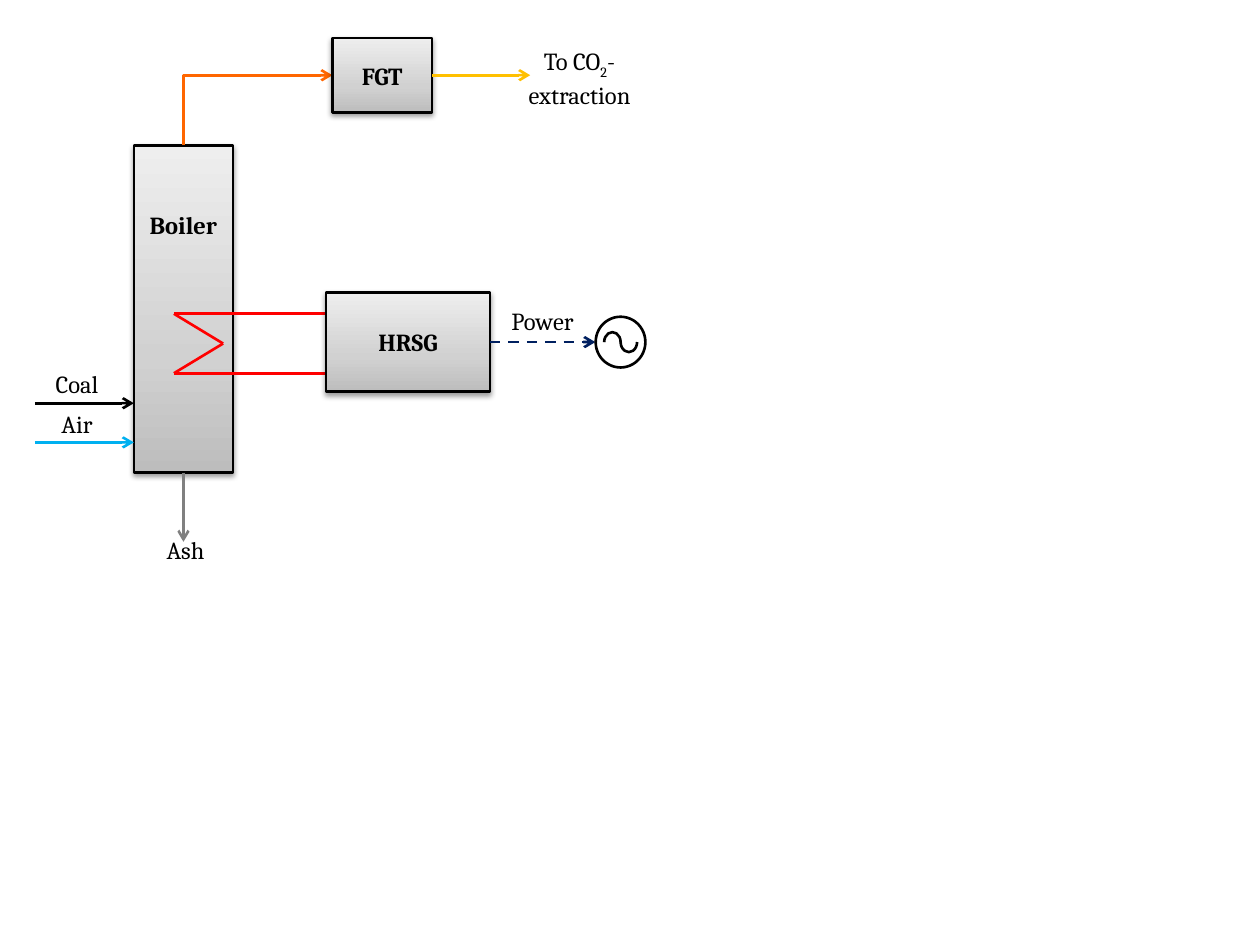
from copy import deepcopy
from dataclasses import dataclass

from pptx import Presentation
from pptx.dml.color import RGBColor
from pptx.enum.dml import MSO_LINE
from pptx.enum.shapes import MSO_CONNECTOR, MSO_SHAPE
from pptx.enum.text import MSO_ANCHOR, PP_ALIGN
from pptx.oxml import parse_xml
from pptx.oxml.ns import nsdecls, qn
from pptx.util import Pt


@dataclass(frozen=True)
class Theme:
    font: str = "Cambria"
    size: float = 14
    line: float = 1.5
    black: str = "000000"
    white: str = "FFFFFF"
    air: str = "00B0F0"
    ash: str = "808080"
    flue: str = "FF6600"
    clean: str = "FFC000"
    steam: str = "FF0000"
    power: str = "002060"
    metal: tuple = ((0, "BDBDBD"), (0.35, "D1D1D1"), (1, "EEEEEE"))


THEME = Theme()
SHADOW = (
    f'<a:effectLst {nsdecls("a")}>'
    '<a:outerShdw blurRad="39370" dist="20320" dir="5400000" rotWithShape="0">'
    '<a:srgbClr val="000000"><a:alpha val="38000"/></a:srgbClr>'
    "</a:outerShdw></a:effectLst>"
)


def rgb(code):
    return RGBColor.from_string(code)


def write(frame, text, bold=False, anchor=MSO_ANCHOR.TOP, top=3.6):
    """Write centred text; parts between tildes are subscripts."""
    frame.word_wrap = True
    frame.vertical_anchor = anchor
    frame.margin_top = Pt(top)
    para = frame.paragraphs[0]
    para.alignment = PP_ALIGN.CENTER
    for i, part in enumerate(text.split("~")):
        run = para.add_run()
        run.text = part
        font = run.font
        font.name, font.size, font.bold = THEME.font, Pt(THEME.size), bold
        font.color.rgb = rgb(THEME.black)
        if i % 2:
            font._element.set("baseline", "-25000")


def label(slide, text, x, y, w, h=24.5):
    box = slide.shapes.add_textbox(Pt(x), Pt(y), Pt(w), Pt(h))
    write(box.text_frame, text)


def stroke(line, color):
    line.color.rgb = rgb(color)
    line.width = Pt(THEME.line)


def outline(slide, kind, x, y, w, h):
    shape = slide.shapes.add_shape(kind, Pt(x), Pt(y), Pt(w), Pt(h))
    shape.shadow.inherit = False
    stroke(shape.line, THEME.black)
    return shape


def unit(slide, text, x, y, w, h, **form):
    """Process unit: metallic box with a soft shadow."""
    box = outline(slide, MSO_SHAPE.RECTANGLE, x, y, w, h)
    box.fill.gradient()
    box.fill.gradient_angle = 90
    props = box._element.spPr
    stops = props.find(qn("a:gradFill")).find(qn("a:gsLst"))
    stops.append(deepcopy(stops[-1]))
    for stop, (pos, color) in zip(box.fill.gradient_stops, THEME.metal):
        stop.position = pos
        stop.color.rgb = rgb(color)
    props.replace(props.find(qn("a:effectLst")), parse_xml(SHADOW))
    write(box.text_frame, text, bold=True, **form)
    return box


def link(slide, start, end, color, arrow=True, dash=False,
         kind=MSO_CONNECTOR.STRAIGHT):
    ends = [Pt(n) for n in (*start, *end)]
    line = slide.shapes.add_connector(kind, *ends)
    stroke(line.line, color)
    if dash:
        line.line.dash_style = MSO_LINE.DASH
    if arrow:
        head = parse_xml(f'<a:tailEnd {nsdecls("a")} type="arrow"/>')
        line.line._get_or_add_ln().append(head)
    line._element.spPr.append(parse_xml(f'<a:effectLst {nsdecls("a")}/>'))
    return line


def elbow(slide, start, end, color):
    """Arrow that rises from start, then turns right to end."""
    (x1, y1), (x2, y2) = start, end
    mid_x, mid_y = (x1 + x2) / 2, (y1 + y2) / 2
    half_w, half_h = (y1 - y2) / 2, (x2 - x1) / 2
    line = link(slide, (mid_x - half_w, mid_y - half_h),
                (mid_x + half_w, mid_y + half_h), color,
                kind=MSO_CONNECTOR.ELBOW)
    props = line._element.spPr
    props.find(qn("a:prstGeom")).set("prst", "bentConnector2")
    props.find(qn("a:xfrm")).set("rot", "16200000")


def coil(slide):
    left, right, tip = 99.4, 186.4, 127.5
    mid, half = 196.3, 17
    for y in (mid - half, mid + half):
        link(slide, (right, y), (left, y), THEME.steam, arrow=False)
        link(slide, (left, y), (tip, mid), THEME.steam, arrow=False)


def grid(slide):
    """Power grid symbol: a circle holding one sine wave."""
    disc = outline(slide, MSO_SHAPE.OVAL, 340.4, 181, 28.4, 29)
    disc.fill.solid()
    disc.fill.fore_color.rgb = rgb(THEME.white)
    for x, turn in ((344.2, 270), (353.6, 90)):
        arc = outline(slide, MSO_SHAPE.ARC, x, 190.8, 11.5, 9.4)
        arc.fill.background()
        arc.adjustments[0], arc.adjustments[1] = 162, 54.72
        arc.rotation = turn


def main():
    deck = Presentation()
    deck.slide_width, deck.slide_height = Pt(720), Pt(540)
    slide = deck.slides.add_slide(deck.slide_layouts[6])

    # Boiler with its feeds and ash outlet
    boiler = unit(slide, "Boiler", 76.5, 83, 56.7, 187, top=37)
    for text, y, color in (("Coal", 230.4, THEME.black),
                           ("Air", 252.8, THEME.air)):
        link(slide, (20, y), (76.5, y), color)
        label(slide, text, 20, y - 22.8, 48)
    ash = link(slide, (104.85, 270), (104.85, 309.6), THEME.ash)
    ash.begin_connect(boiler, 2)
    label(slide, "Ash", 82, 302.4, 48)

    # Flue gas treatment
    elbow(slide, (104.85, 83), (190, 43), THEME.flue)
    fgt = unit(slide, "FGT", 190, 21.7, 56.8, 42.6, anchor=MSO_ANCHOR.MIDDLE)
    gas = link(slide, (246.8, 43), (303, 43), THEME.clean)
    gas.begin_connect(fgt, 3)
    label(slide, "To CO~2~-extraction", 292.3, 23, 77.8, 41)

    # Steam cycle and power
    coil(slide)
    hrsg = unit(slide, "HRSG", 186.4, 167.1, 93.6, 56.8,
                anchor=MSO_ANCHOR.MIDDLE)
    power = link(slide, (280, 195.5), (340.2, 195.5), THEME.power, dash=True)
    power.begin_connect(hrsg, 3)
    label(slide, "Power", 283, 171.4, 54)
    grid(slide)

    deck.save("out.pptx")


if __name__ == "__main__":
    main()
